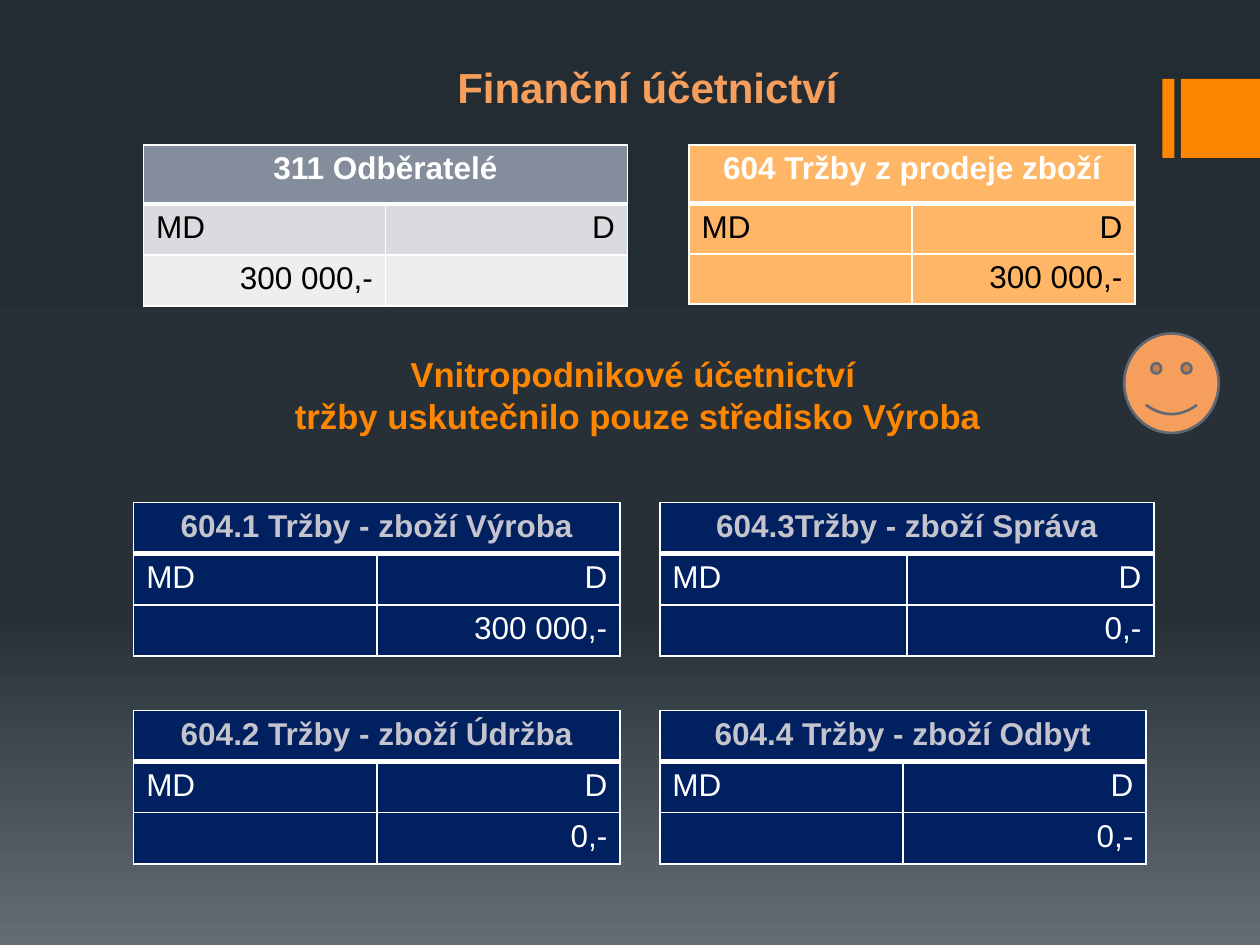
from copy import deepcopy

from lxml.etree import SubElement
from pptx import Presentation
from pptx.dml.color import RGBColor
from pptx.enum.shapes import MSO_SHAPE
from pptx.enum.text import MSO_ANCHOR, PP_ALIGN
from pptx.oxml.ns import qn
from pptx.util import Pt

FONT = "Arial"
WHITE = RGBColor(0xFF, 0xFF, 0xFF)
BLACK = RGBColor(0x00, 0x00, 0x00)
ORANGE = RGBColor(0xFF, 0x86, 0x00)
PEACH = RGBColor(0xF6, 0x9E, 0x5C)
APRICOT = RGBColor(0xFF, 0xB6, 0x66)
NAVY = RGBColor(0x00, 0x20, 0x60)
SILVER = RGBColor(0xC5, 0xC4, 0xCC)
SLATE = RGBColor(0x83, 0x8D, 0x9B)
GREY = RGBColor(0xD9, 0xDB, 0xDE)
PALE_GREY = RGBColor(0xED, 0xEE, 0xEF)
OUTLINE = RGBColor(0x61, 0x68, 0x73)
BACKDROP = [
    (0, RGBColor(0x24, 0x2C, 0x33)),
    (0.65, RGBColor(0x27, 0x30, 0x37)),
    (1, RGBColor(0x63, 0x6D, 0x76)),
]

# Each scheme: fills of the three rows, header text colour, body text colour
GREY_SCHEME = ((SLATE, GREY, PALE_GREY), WHITE, BLACK)
APRICOT_SCHEME = ((APRICOT,) * 3, WHITE, BLACK)
NAVY_SCHEME = ((NAVY,) * 3, SILVER, WHITE)

# Box, row heights, scheme, account, debit, credit
ACCOUNTS = [
    ((82, 82.8, 276.6), (33.8, 29.2, 29), GREY_SCHEME,
     "311 Odběratelé", "300 000,-", ""),
    ((393.8, 82.8, 254.8), (33.4, 28.8, 28.8), APRICOT_SCHEME,
     "604 Tržby z prodeje zboží", "", "300 000,-"),
    ((76.4, 287.2, 277.8), (29.2,) * 3, NAVY_SCHEME,
     "604.1 Tržby - zboží Výroba", "", "300 000,-"),
    ((377, 287.2, 282.4), (29.2,) * 3, NAVY_SCHEME,
     "604.3Tržby - zboží Správa", "", "0,-"),
    ((76.4, 406, 277.8), (29.2,) * 3, NAVY_SCHEME,
     "604.2 Tržby - zboží Údržba", "", "0,-"),
    ((377, 406, 277.8), (29.2,) * 3, NAVY_SCHEME,
     "604.4 Tržby - zboží Odbyt", "", "0,-"),
]


def add_span(para, text, size, color, bold=False):
    span = para.add_run()
    span.text = text
    span.font.name = FONT
    span.font.size = Pt(size)
    span.font.bold = bold
    span.font.color.rgb = color


def paint_background(page):
    fill = page.background.fill
    fill.gradient()
    fill.gradient_angle = 270
    stop_list = page.element.find(".//" + qn("a:gsLst"))
    stop_list.append(deepcopy(stop_list[-1]))
    for stop, (position, color) in zip(fill.gradient_stops, BACKDROP):
        stop.position = position
        stop.color.rgb = color


def add_figure(page, kind, box, color):
    shape = page.shapes.add_shape(kind, *map(Pt, box))
    shape.shadow.inherit = False
    shape.fill.solid()
    shape.fill.fore_color.rgb = color
    shape.line.fill.background()
    return shape


def add_side_marks(page, left, top, size):
    add_figure(page, MSO_SHAPE.RECTANGLE, (left, top, 6.8, size), ORANGE)
    add_figure(page, MSO_SHAPE.RECTANGLE, (left + 10.5, top, size, size), ORANGE)


def place_title(page, box):
    title = page.shapes.title
    title.left, title.top, title.width, title.height = map(Pt, box)
    frame = title.text_frame
    frame.word_wrap = True
    frame.vertical_anchor = MSO_ANCHOR.BOTTOM
    frame.margin_bottom = Pt(26.4)
    para = frame.paragraphs[0]
    para.alignment = PP_ALIGN.CENTER
    add_span(para, "Vnitropodnikové účetnictví ", 19.8, ORANGE, True)
    para.add_line_break()
    add_span(para, "tržby uskutečnilo pouze středisko Výroba", 19.8, ORANGE, True)


def add_heading(page, box):
    frame = page.shapes.add_textbox(*map(Pt, box)).text_frame
    frame.word_wrap = True
    para = frame.paragraphs[0]
    para.alignment = PP_ALIGN.CENTER
    para.space_before = Pt(4.8)
    add_span(para, "Finanční účetnictví", 24, PEACH, True)


def draw_borders(cell, row):
    """White hairlines, with a thick one between the header and the body."""
    widths = {"L": 1, "R": 1, "T": 3 if row == 1 else 1, "B": 3 if row == 0 else 1}
    properties = cell._tc.get_or_add_tcPr()
    for side, width in widths.items():
        line = SubElement(properties, qn(f"a:ln{side}"), w=str(Pt(width)))
        paint = SubElement(line, qn("a:solidFill"))
        SubElement(paint, qn("a:srgbClr"), val=str(WHITE))


def add_account(page, box, heights, scheme, name, debit, credit):
    """A T account: name across the top, debit side left, credit side right."""
    left, top, width = box
    fills, header_color, body_color = scheme
    table = page.shapes.add_table(
        3, 2, Pt(left), Pt(top), Pt(width), Pt(sum(heights))).table
    for column in table.columns:
        column.width = Pt(width / 2)
    table.cell(0, 0).merge(table.cell(0, 1))
    texts = [(name, ""), ("MD", "D"), (debit, credit)]
    for row, height in enumerate(heights):
        table.rows[row].height = Pt(height)
        for column, text in enumerate(texts[row]):
            cell = table.cell(row, column)
            draw_borders(cell, row)
            cell.fill.solid()
            cell.fill.fore_color.rgb = fills[row]
            if not text:
                continue
            para = cell.text_frame.paragraphs[0]
            if row == 0:
                para.alignment = PP_ALIGN.CENTER
            elif text == "MD":
                para.alignment = PP_ALIGN.LEFT
            else:
                para.alignment = PP_ALIGN.RIGHT
            color = body_color if row else header_color
            add_span(para, text, 18, color, row == 0)


def add_smiley(page, box):
    smiley = add_figure(page, MSO_SHAPE.SMILEY_FACE, box, PEACH)
    smiley.line.color.rgb = OUTLINE
    smiley.line.width = Pt(1.5)


def main():
    deck = Presentation()
    deck.slide_width, deck.slide_height = Pt(720), Pt(540)
    page = deck.slides.add_slide(deck.slide_layouts[5])
    paint_background(page)
    add_side_marks(page, 664.3, 45, 45.2)
    place_title(page, (76.4, 185, 576, 90.8))
    add_heading(page, (38.5, 31.7, 663, 45))
    for account in ACCOUNTS:
        add_account(page, *account)
    add_smiley(page, (642.4, 190.6, 54, 56.8))
    deck.save("out.pptx")


if __name__ == "__main__":
    main()
